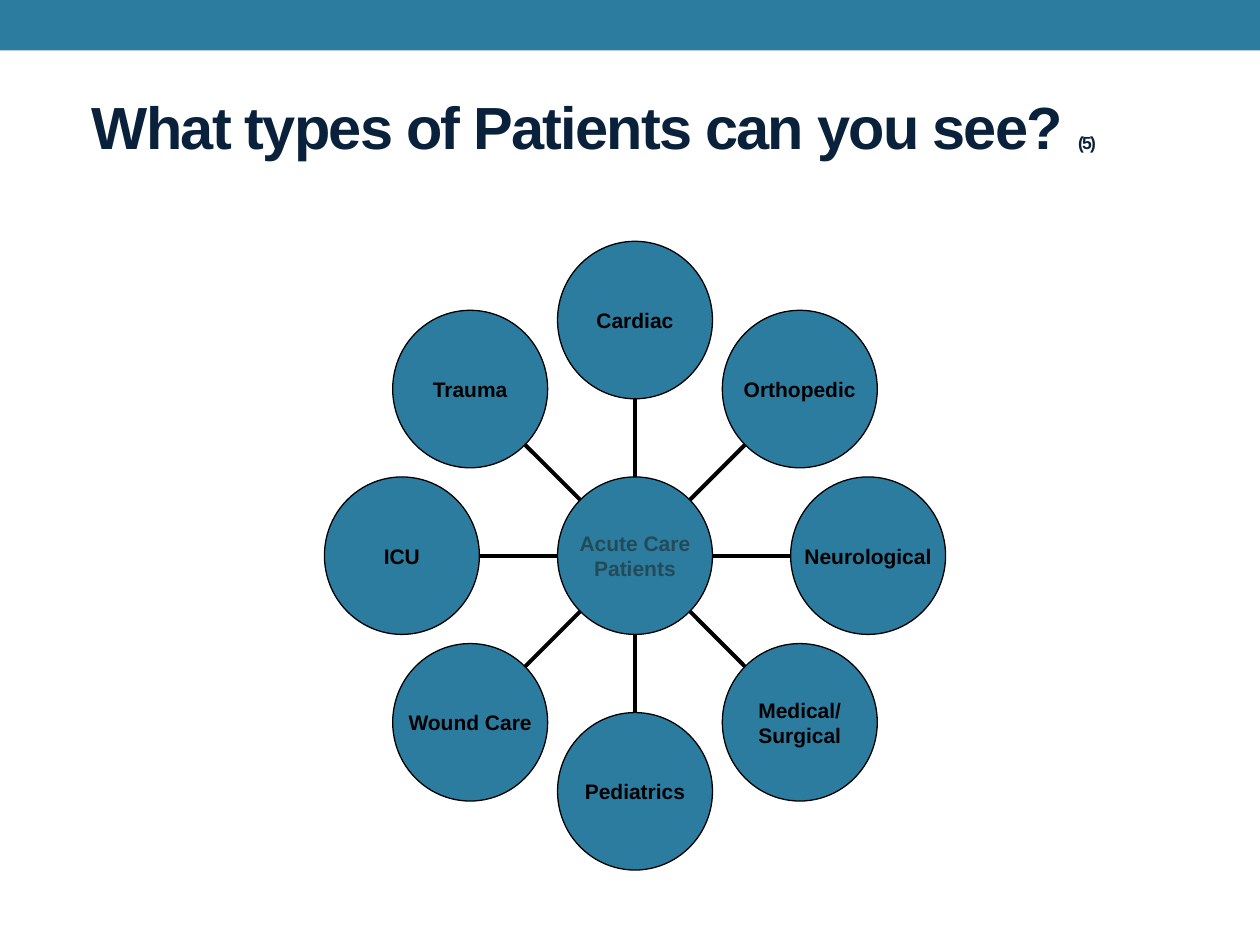
"""Build the slide showing acute care patient types around a central hub."""
import math

import lxml.etree
import pptx
import pptx.dml.color
import pptx.enum.shapes
import pptx.enum.text
import pptx.oxml.ns
import pptx.util

Inches, Pt = pptx.util.Inches, pptx.util.Pt
SHAPES = pptx.enum.shapes.MSO_SHAPE
ANCHOR = pptx.enum.text.MSO_ANCHOR
ALIGN = pptx.enum.text.PP_ALIGN

TITLE = [("What types of Patients can you see? ", 34), ("(5)", 10)]
HUB = ["Acute Care", "Patients"]
PATIENT_TYPES = [
    ["Cardiac"], ["Orthopedic"], ["Neurological"], ["Medical/", "Surgical"],
    ["Pediatrics"], ["Wound Care"], ["ICU"], ["Trauma"],
]
COLORS = {"teal": "2C7C9F", "navy": "09213B", "black": "000000", "slate": "244A58"}
FONT = "Arial"
CENTER_X, CENTER_Y = 5.04, 4.41
ORBIT_X, ORBIT_Y = 1.85, 1.87
CIRCLE_W, CIRCLE_H = 1.23, 1.25


def rgb(name):
    return pptx.dml.color.RGBColor.from_string(COLORS[name])


def style_font(font, size, color):
    font.name, font.size, font.bold = FONT, Pt(size), True
    font.color.rgb = rgb(color)


def add_circle(shapes, x, y, lines, color):
    circle = shapes.add_shape(
        SHAPES.OVAL, Inches(x - CIRCLE_W / 2), Inches(y - CIRCLE_H / 2),
        Inches(CIRCLE_W), Inches(CIRCLE_H))
    circle.shadow.inherit = False
    circle.fill.solid()
    circle.fill.fore_color.rgb = rgb("teal")
    circle.line.color.rgb = rgb("black")
    circle.line.width = Pt(0.75)
    frame = circle.text_frame
    frame.margin_left = frame.margin_right = frame.margin_top = frame.margin_bottom = 0
    frame.word_wrap = False
    frame.vertical_anchor = ANCHOR.MIDDLE
    frame.text = "\n".join(lines)
    for paragraph in frame.paragraphs:
        paragraph.alignment = ALIGN.CENTER
        style_font(paragraph.font, 12, color)


def add_spoke(shapes, dx, dy):
    start_x, start_y = CENTER_X + dx * CIRCLE_W / 2, CENTER_Y + dy * CIRCLE_H / 2
    end_x = CENTER_X + dx * (ORBIT_X - CIRCLE_W / 2)
    end_y = CENTER_Y + dy * (ORBIT_Y - CIRCLE_H / 2)
    spoke = shapes.add_connector(
        pptx.enum.shapes.MSO_CONNECTOR.STRAIGHT,
        Inches(start_x), Inches(start_y), Inches(end_x), Inches(end_y))
    spoke.line.color.rgb = rgb("black")
    spoke.line.width = Pt(2.25)
    lxml.etree.SubElement(spoke._element.spPr, pptx.oxml.ns.qn("a:effectLst"))


def add_title(slide):
    title = slide.shapes.title
    title.left, title.top = Inches(0.63), Inches(0.33)
    title.width, title.height = Inches(8.75), Inches(1.33)
    title.text_frame.vertical_anchor = ANCHOR.MIDDLE
    paragraph = title.text_frame.paragraphs[0]
    paragraph.alignment = ALIGN.LEFT
    for text, size in TITLE:
        run = paragraph.add_run()
        run.text = text
        style_font(run.font, size, "navy")
        run.font._element.set("spc", "-100")


def main():
    deck = pptx.Presentation()
    deck.slide_width, deck.slide_height = Inches(10), Inches(7.5)
    slide = deck.slides.add_slide(deck.slide_layouts[5])
    add_title(slide)

    band = slide.shapes.add_shape(SHAPES.RECTANGLE, 0, 0, Inches(10), Inches(0.4))
    band.shadow.inherit = False
    band.fill.solid()
    band.fill.fore_color.rgb = rgb("teal")
    band.line.fill.background()

    wheel = slide.shapes.add_group_shape().shapes
    for index, lines in reversed(list(enumerate(PATIENT_TYPES))):
        angle = 2 * math.pi * index / len(PATIENT_TYPES)
        dx, dy = math.sin(angle), -math.cos(angle)
        add_spoke(wheel, dx, dy)
        add_circle(wheel, CENTER_X + dx * ORBIT_X, CENTER_Y + dy * ORBIT_Y, lines, "black")
    add_circle(wheel, CENTER_X, CENTER_Y, HUB, "slate")

    deck.save("out.pptx")


if __name__ == "__main__":
    main()
